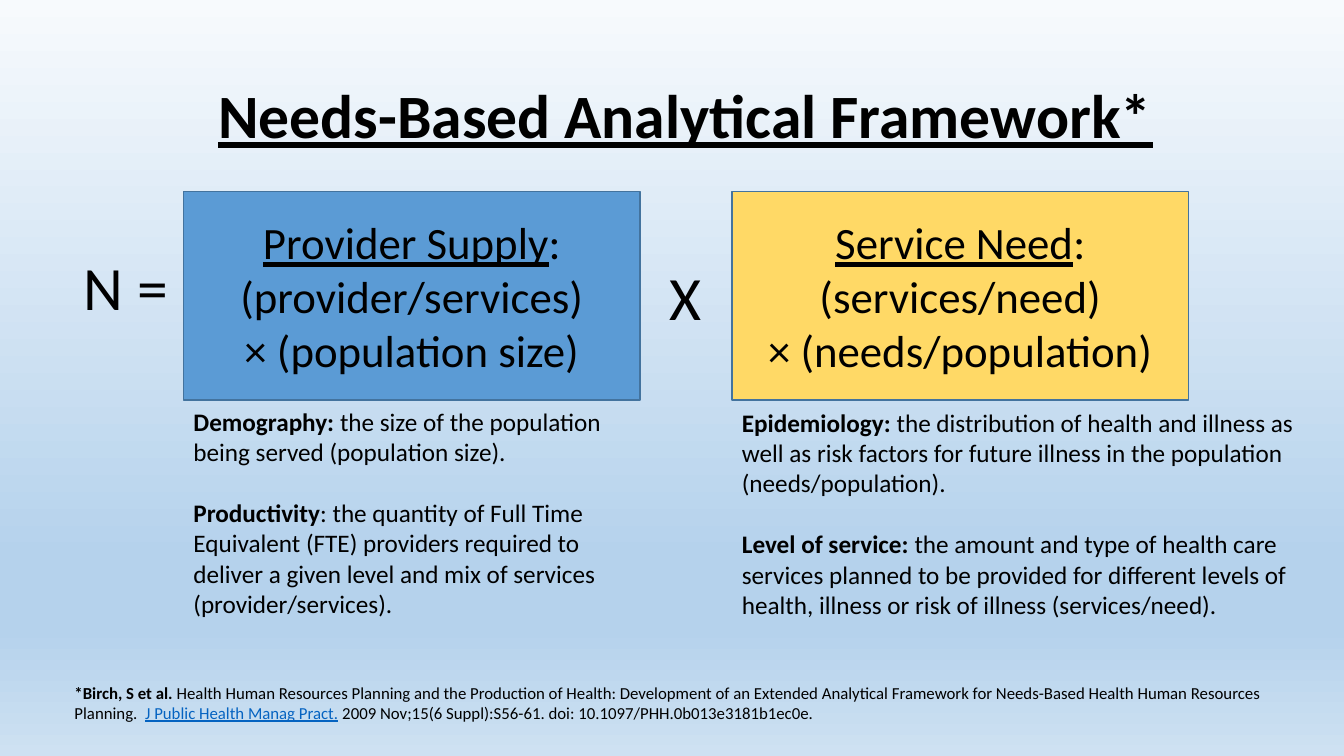
from dataclasses import dataclass

from lxml import etree
from pptx import Presentation
from pptx.dml.color import RGBColor
from pptx.enum.shapes import MSO_SHAPE
from pptx.enum.text import MSO_ANCHOR, MSO_AUTO_SIZE, PP_ALIGN
from pptx.oxml.ns import qn
from pptx.util import Inches, Pt


@dataclass(frozen=True)
class Theme:
    font: str = "Calibri"
    text: str = "000000"
    citation: str = "0563C1"
    supply: str = "5B9BD5"
    need: str = "FFD966"
    outline: str = "43739E"
    background: tuple = ((0, "F7FAFD"), (74, "B5D2EC"), (83, "B5D2EC"), (100, "CEE1F2"))
    display_size: int = 44
    factor_size: int = 32
    body_size: int = 18
    note_size: int = 12
    paragraph_gap: int = 22


THEME = Theme()

# Shared layout, in inches
FACTOR_TOP, FACTOR_WIDTH, FACTOR_HEIGHT = 1.9, 4.53, 2.07
SUPPLY_LEFT, NEED_LEFT = 1.82, 7.26


def paint_background(slide):
    fill = slide.background.fill
    fill.gradient()
    fill.gradient_angle = 270
    stops = fill._fill._gradFill.find(qn("a:gsLst"))
    for stop in list(stops):
        stops.remove(stop)
    for percent, color in THEME.background:
        stop = etree.SubElement(stops, qn("a:gs"), pos=str(percent * 1000))
        etree.SubElement(stop, qn("a:srgbClr"), val=color)


def add_run(paragraph, text, size, bold=False, underline=False, color=THEME.text):
    run = paragraph.add_run()
    run.text = text
    font = run.font
    font.name, font.size = THEME.font, Pt(size)
    font.bold, font.underline = bold, underline
    font.color.rgb = RGBColor.from_string(color)


def write_paragraphs(frame, paragraphs, size, align=PP_ALIGN.LEFT):
    """Each paragraph is a list of (text, run options) pairs."""
    for index, runs in enumerate(paragraphs):
        paragraph = frame.add_paragraph() if index else frame.paragraphs[0]
        paragraph.alignment = align
        for text, options in runs:
            add_run(paragraph, text, size, **options)


def add_text(shapes, box, paragraphs, size, align=PP_ALIGN.LEFT, wrap=True):
    frame = shapes.add_textbox(*map(Inches, box)).text_frame
    frame.word_wrap = wrap
    frame.auto_size = MSO_AUTO_SIZE.SHAPE_TO_FIT_TEXT
    write_paragraphs(frame, paragraphs, size, align)
    return frame


def add_title(slide, text):
    frame = add_text(slide.shapes, (1.65, 0.45, 10.3, 1.45),
                     [[(text, {"bold": True, "underline": True})]],
                     THEME.display_size, PP_ALIGN.CENTER)
    frame.auto_size = MSO_AUTO_SIZE.NONE
    frame.vertical_anchor = MSO_ANCHOR.MIDDLE
    frame.paragraphs[0].line_spacing = 0.9


def add_factor(shapes, left, color, heading, terms):
    box = (left, FACTOR_TOP, FACTOR_WIDTH, FACTOR_HEIGHT)
    shape = shapes.add_shape(MSO_SHAPE.RECTANGLE, *map(Inches, box))
    shape.shadow.inherit = False
    shape.fill.solid()
    shape.fill.fore_color.rgb = RGBColor.from_string(color)
    shape.line.color.rgb = RGBColor.from_string(THEME.outline)
    shape.line.width = Pt(1)
    frame = shape.text_frame
    frame.word_wrap = True
    frame.vertical_anchor = MSO_ANCHOR.MIDDLE
    paragraphs = [[(heading, {"underline": True}), (":", {})]]
    paragraphs += [[(term, {})] for term in terms]
    write_paragraphs(frame, paragraphs, THEME.factor_size, PP_ALIGN.CENTER)


def add_definitions(slide, box, paragraphs, gap_before):
    frame = add_text(slide.shapes, box, paragraphs, THEME.body_size)
    frame.paragraphs[gap_before].space_before = Pt(THEME.paragraph_gap)


def main():
    presentation = Presentation()
    presentation.slide_width, presentation.slide_height = Inches(13.33), Inches(7.5)
    slide = presentation.slides.add_slide(presentation.slide_layouts[6])
    bold = {"bold": True}

    paint_background(slide)
    add_title(slide, "Needs-Based Analytical Framework*")

    # Equation: N = supply X need
    equation = slide.shapes.add_group_shape().shapes
    add_factor(equation, SUPPLY_LEFT, THEME.supply, "Provider Supply",
               ["(provider/services)", "× (population size)"])
    add_factor(equation, NEED_LEFT, THEME.need, "Service Need",
               ["(services/need)", "× (needs/population)"])
    for text, box in (("X", (6.54, 2.52, 0.52, 0.84)), ("N =", (0.73, 2.42, 1.05, 0.84))):
        add_text(equation, box, [[(text, {})]], THEME.display_size, wrap=False)

    # Definitions under each factor
    add_definitions(slide, (SUPPLY_LEFT, 3.98, FACTOR_WIDTH, 2.52), [
        [("Demography: ", bold),
         ("the size of the population being served (population size).", {})],
        [("Productivity", bold),
         (": the quantity of Full Time Equivalent (FTE) providers required to "
          "deliver a given level and mix of services", {})],
        [("(provider/services).", {})],
    ], gap_before=1)
    add_definitions(slide, (NEED_LEFT, 3.99, 5.84, 2.22), [
        [("Epidemiology: ", bold),
         ("the distribution of health and illness as well as risk factors for "
          "future illness in the population", {})],
        [("(needs/population).", {})],
        [("Level of service: ", bold),
         ("the amount and type of health care services planned to be provided for "
          "different levels of health, illness or risk of illness (services/need).", {})],
    ], gap_before=2)

    # Reference
    add_text(slide.shapes, (0.64, 6.72, 12.32, 0.5), [[
        ("*Birch, S et al. ", bold),
        ("Health Human Resources Planning and the Production of Health: Development of an "
         "Extended Analytical Framework for Needs-Based Health Human Resources Planning.  ", {}),
        ("J Public Health Manag Pract.", {"underline": True, "color": THEME.citation}),
        (" 2009 Nov;15(6 Suppl):S56-61. doi: 10.1097/PHH.0b013e3181b1ec0e.", {}),
    ]], THEME.note_size)

    presentation.save("out.pptx")


if __name__ == "__main__":
    main()
